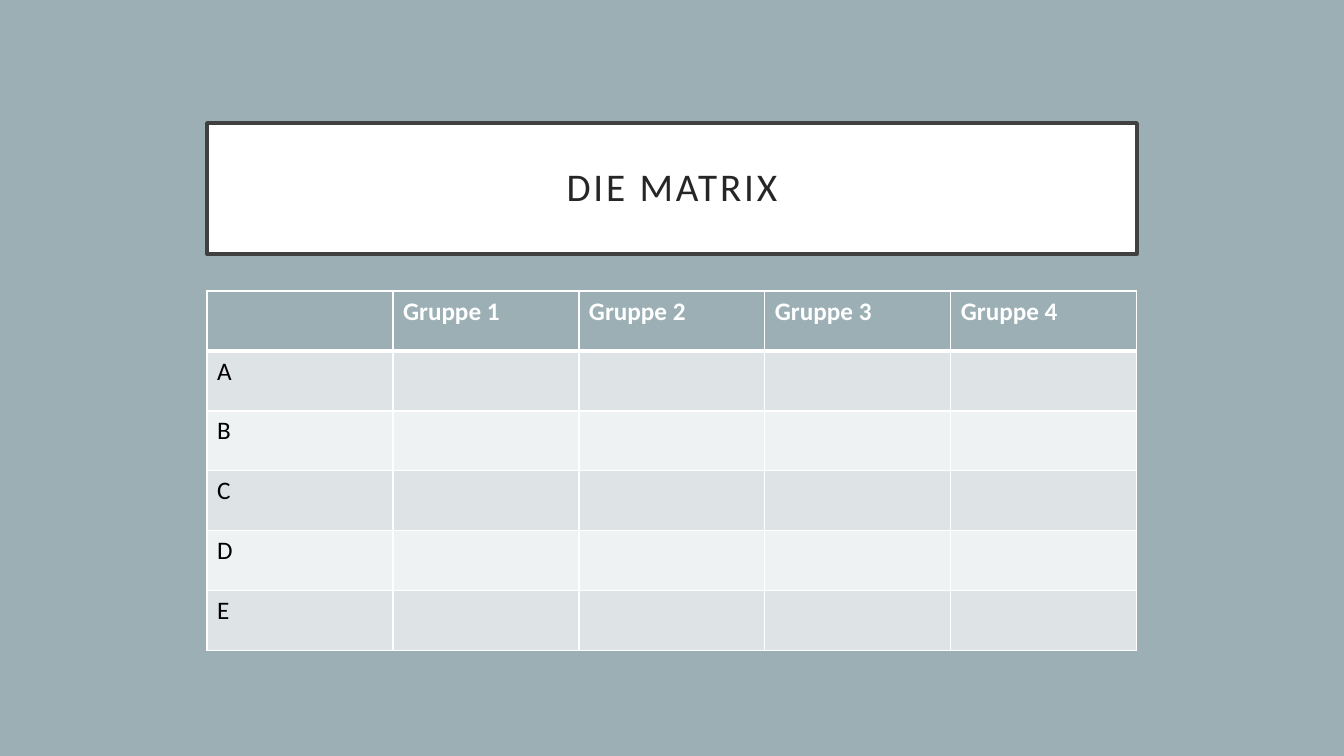
from lxml import etree
from pptx import Presentation
from pptx.dml.color import RGBColor
from pptx.enum.shapes import MSO_SHAPE
from pptx.enum.text import MSO_ANCHOR, PP_ALIGN
from pptx.oxml.ns import qn
from pptx.util import Emu, Pt

RECTANGLE = MSO_SHAPE.RECTANGLE
MIDDLE = MSO_ANCHOR.MIDDLE
LEFT, CENTER = PP_ALIGN.LEFT, PP_ALIGN.CENTER

SLIDE_WIDTH, SLIDE_HEIGHT = 1344, 756
EMU_PER_PX = 12192000 / SLIDE_WIDTH
CONTENT_LEFT, CONTENT_WIDTH = 207, 930

FONT = "Calibri"
BLUE_GREY = "9BAFB5"
WHITE = "FFFFFF"
BLACK = "000000"
BANDS = ["DEE3E5", "EFF2F3"]

GROUPS = ["", "Gruppe 1", "Gruppe 2", "Gruppe 3", "Gruppe 4"]
ROW_LABELS = ["A", "B", "C", "D", "E"]


def px(length):
    return Emu(round(length * EMU_PER_PX))


def color(hex_value):
    return RGBColor.from_string(hex_value)


def paint(fill, hex_value):
    fill.solid()
    fill.fore_color.rgb = color(hex_value)


def write(frame, text, size=18, text_color=BLACK, bold=False, align=LEFT,
          line_spacing=1.0, letter_spacing=0):
    """Fill the first paragraph; letter_spacing is in points."""
    paragraph = frame.paragraphs[0]
    paragraph.alignment = align
    paragraph.line_spacing = line_spacing
    run = paragraph.add_run()
    run.text = text
    run.font.name = FONT
    run.font.size = Pt(size)
    run.font.bold = bold
    run.font.color.rgb = color(text_color)
    if letter_spacing:
        run.font._element.set("spc", str(letter_spacing * 100))


def add_title(slide, text, top, height):
    shape = slide.shapes.add_shape(
        RECTANGLE, px(CONTENT_LEFT), px(top), px(CONTENT_WIDTH), px(height))
    shape.shadow.inherit = False
    paint(shape.fill, WHITE)
    shape.line.color.rgb = color("404040")
    shape.line.width = Pt(2.5)
    frame = shape.text_frame
    frame.word_wrap = True
    frame.vertical_anchor = MIDDLE
    frame.margin_left = frame.margin_right = px(20)
    frame.margin_top = frame.margin_bottom = px(20)
    write(frame, text, size=28, text_color="262626", align=CENTER,
          line_spacing=0.9, letter_spacing=2)


def set_borders(cell, top=1, bottom=1):
    """Draw white borders; top and bottom are widths in points."""
    properties = cell._tc.get_or_add_tcPr()
    widths = {"a:lnL": 1, "a:lnR": 1, "a:lnT": top, "a:lnB": bottom}
    for position, (tag, width) in enumerate(widths.items()):
        line = etree.Element(qn(tag), w=str(Pt(width)))
        fill = etree.SubElement(line, qn("a:solidFill"))
        etree.SubElement(fill, qn("a:srgbClr"), val=WHITE)
        properties.insert(position, line)


def add_matrix(slide, top, row_height):
    rows = [GROUPS] + [[label] + [""] * (len(GROUPS) - 1) for label in ROW_LABELS]
    table = slide.shapes.add_table(
        len(rows), len(GROUPS), px(CONTENT_LEFT), px(top),
        px(CONTENT_WIDTH), px(row_height * len(rows))).table
    for row_index, texts in enumerate(rows):
        is_header = row_index == 0
        for column_index, text in enumerate(texts):
            cell = table.cell(row_index, column_index)
            paint(cell.fill, BLUE_GREY if is_header else BANDS[(row_index - 1) % 2])
            set_borders(cell, top=3 if row_index == 1 else 1,
                        bottom=3 if is_header else 1)
            if text:
                write(cell.text_frame, text, bold=is_header,
                      text_color=WHITE if is_header else BLACK)


def main():
    presentation = Presentation()
    presentation.slide_width = px(SLIDE_WIDTH)
    presentation.slide_height = px(SLIDE_HEIGHT)
    slide = presentation.slides.add_slide(presentation.slide_layouts[6])
    paint(slide.background.fill, BLUE_GREY)
    add_title(slide, "DIE MATRIX", top=123, height=131)
    add_matrix(slide, top=291, row_height=60)
    presentation.save("out.pptx")


if __name__ == "__main__":
    main()
